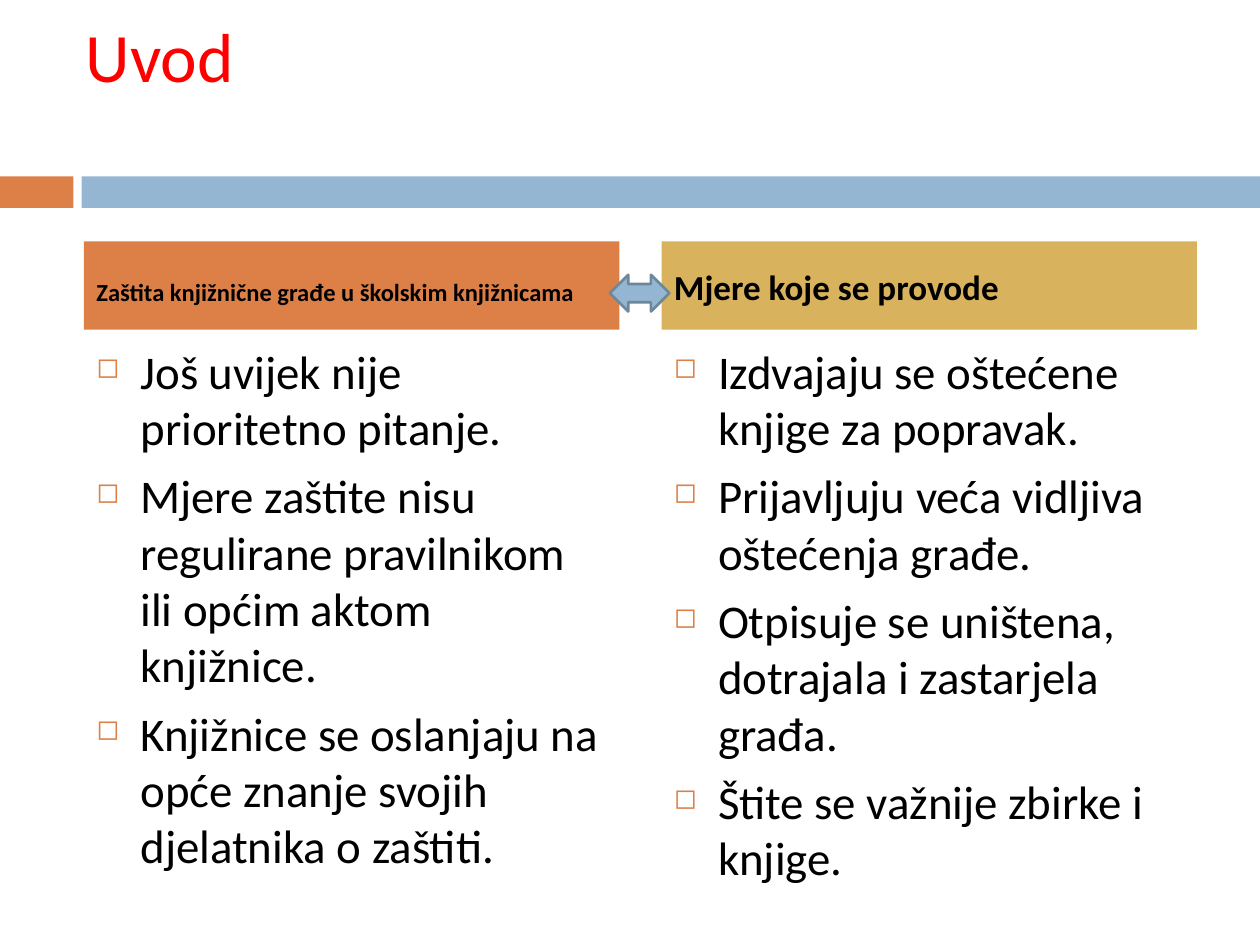
import pptx
import pptx.dml.color
import pptx.enum.shapes
import pptx.enum.text
import pptx.oxml
import pptx.oxml.ns
import pptx.util
from lxml import etree

Pt = pptx.util.Pt
RGBColor = pptx.dml.color.RGBColor
SHAPE = pptx.enum.shapes.MSO_SHAPE
ANCHOR = pptx.enum.text.MSO_ANCHOR
ALIGN = pptx.enum.text.PP_ALIGN

ORANGE = RGBColor(0xDD, 0x80, 0x47)
BLUE = RGBColor(0x94, 0xB6, 0xD2)
GOLD = RGBColor(0xD8, 0xB2, 0x5C)
ARROW_EDGE = RGBColor(0x6D, 0x87, 0x9B)
RED = RGBColor(0xFF, 0x00, 0x00)
BLACK = RGBColor(0x00, 0x00, 0x00)
FONT = "Calibri"

COLUMN_WIDTH = 306
COLUMNS = [
    (48, ORANGE, "Zaštita knjižnične građe u školskim knjižnicama", 14, 11, [
        "Još uvijek nije prioritetno pitanje.",
        "Mjere zaštite nisu regulirane pravilnikom ili općim aktom knjižnice.",
        "Knjižnice se oslanjaju na opće znanje svojih djelatnika o zaštiti.",
    ]),
    (378, GOLD, "Mjere koje se provode", 20, 5, [
        "Izdvajaju se oštećene knjige za popravak.",
        "Prijavljuju veća vidljiva oštećenja građe.",
        "Otpisuje se uništena, dotrajala i zastarjela građa.",
        "Štite se važnije zbirke i knjige.",
    ]),
]


def add_filled(slide, preset, left, top, width, height, fill):
    shape = slide.shapes.add_shape(preset, Pt(left), Pt(top), Pt(width), Pt(height))
    shape.shadow.inherit = False
    shape.fill.solid()
    shape.fill.fore_color.rgb = fill
    shape.line.fill.background()
    return shape


def add_run(paragraph, text, size, color, bold=False):
    paragraph.alignment = ALIGN.LEFT
    run = paragraph.add_run()
    run.text = text
    run.font.name = FONT
    run.font.size = Pt(size)
    run.font.bold = bold
    run.font.color.rgb = color


def add_text_frame(slide, left, top, width, height):
    box = slide.shapes.add_textbox(Pt(left), Pt(top), Pt(width), Pt(height))
    box.text_frame.word_wrap = True
    return box.text_frame


def set_bullet(paragraph):
    """Give the paragraph a small orange square with a hanging indent."""
    properties = paragraph._p.get_or_add_pPr()
    properties.set("marL", str(Pt(25.2)))
    properties.set("indent", str(Pt(-25.2)))
    qn = pptx.oxml.ns.qn
    color = etree.SubElement(properties, qn("a:buClr"))
    etree.SubElement(color, qn("a:srgbClr"), val=str(ORANGE))
    etree.SubElement(properties, qn("a:buSzPct"), val="60000")
    etree.SubElement(properties, qn("a:buChar"), char="◻")


def add_title(slide, text):
    frame = add_text_frame(slide, 42, 21.6, 642, 68.4)
    frame.vertical_anchor = ANCHOR.MIDDLE
    frame.margin_bottom = Pt(52)
    add_run(frame.paragraphs[0], text, 39.6, RED)


def add_heading(slide, left, fill, text, size, top_margin):
    heading = add_filled(slide, SHAPE.RECTANGLE, left, 138, COLUMN_WIDTH, 50.4, fill)
    frame = heading.text_frame
    frame.word_wrap = True
    frame.vertical_anchor = ANCHOR.MIDDLE
    frame.margin_top = Pt(top_margin)
    add_run(frame.paragraphs[0], text, size, BLACK, bold=True)


def add_bullets(slide, left, points):
    frame = add_text_frame(slide, left, 192, COLUMN_WIDTH, 282)
    for index, point in enumerate(points):
        paragraph = frame.add_paragraph() if index else frame.paragraphs[0]
        paragraph.space_before = Pt(7)
        set_bullet(paragraph)
        add_run(paragraph, point, 26.8, BLACK)


def add_double_arrow(slide):
    arrow = add_filled(slide, SHAPE.LEFT_RIGHT_ARROW, 348.5, 157, 34, 21, BLUE)
    arrow.line.color.rgb = ARROW_EDGE
    arrow.line.width = Pt(1.5)


def main():
    deck = pptx.Presentation()
    deck.slide_width, deck.slide_height = Pt(720), Pt(540)
    slide = deck.slides.add_slide(deck.slide_layouts[6])
    add_filled(slide, SHAPE.RECTANGLE, 0, 100.8, 42, 18, ORANGE)
    add_filled(slide, SHAPE.RECTANGLE, 46.6, 100.8, 673.4, 18, BLUE)
    add_title(slide, "Uvod")
    for left, fill, heading, size, top_margin, points in COLUMNS:
        add_bullets(slide, left, points)
        add_heading(slide, left, fill, heading, size, top_margin)
    add_double_arrow(slide)
    deck.save("out.pptx")


if __name__ == "__main__":
    main()
